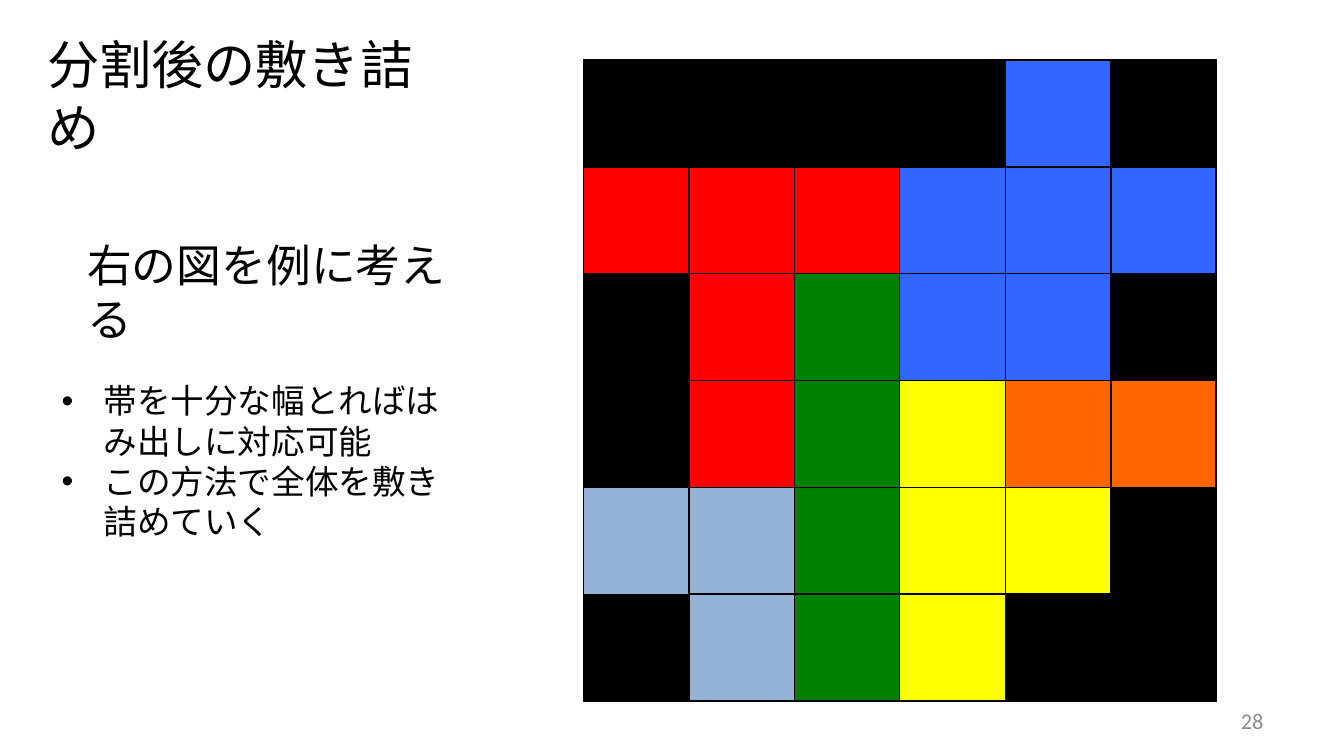
"""Build the slide on tiling after the split, with its coloured grid."""
from dataclasses import dataclass

import lxml.etree
import pptx
import pptx.dml.color
import pptx.enum.text
import pptx.oxml.ns
import pptx.util

Pt = pptx.util.Pt
qn = pptx.oxml.ns.qn
ALIGN = pptx.enum.text.PP_ALIGN
ANCHOR = pptx.enum.text.MSO_ANCHOR

BLACK = "000000"
COLORS = {"K": BLACK, "B": "3366FF", "R": "FF0000", "G": "008000",
          "Y": "FFFF00", "O": "FF6600", "L": "95B3D7"}
TILES = ["KKKKBK", "RRRBBB", "KRGBBK", "KRGYOO", "LLGYYK", "KLGYKK"]
N = len(TILES)


@dataclass
class Label:
    text: str
    left: float
    top: float
    width: float
    height: float
    size: float
    color: str = BLACK
    align: ALIGN = ALIGN.LEFT
    anchor: ANCHOR = ANCHOR.TOP
    bullets: bool = False


TITLE = Label("分割後の敷き詰め", 18, 13.7, 235.4, 41, 28)
LABELS = [
    Label("右の図を例に考える", 39.6, 123.8, 221.8, 36, 24),
    Label("帯を十分な幅とればはみ出しに対応可能\nこの方法で全体を敷き詰めていく",
          25.9, 200.2, 228.2, 94.3, 18, bullets=True),
    Label("28", 516.2, 375.1, 167.8, 21.6, 12, "8C8C8C", ALIGN.RIGHT, ANCHOR.MIDDLE),
]


def rgb(color: str) -> pptx.dml.color.RGBColor:
    """Turn a hex string into a colour."""
    return pptx.dml.color.RGBColor.from_string(color)


def add_bullet(p) -> None:
    """Give a paragraph a hanging bullet."""
    pPr = p._p.get_or_add_pPr()
    pPr.set("marL", str(Pt(22.5)))
    pPr.set("indent", str(-Pt(22.5)))
    lxml.etree.SubElement(pPr, qn("a:buFont"), typeface="Arial")
    lxml.etree.SubElement(pPr, qn("a:buChar"), char="•")


def fill_label(sp, label: Label) -> None:
    """Place a text shape and write its formatted text."""
    sp.left, sp.top = Pt(label.left), Pt(label.top)
    sp.width, sp.height = Pt(label.width), Pt(label.height)
    tf = sp.text_frame
    tf.text = label.text
    tf.word_wrap = True
    tf.auto_size = pptx.enum.text.MSO_AUTO_SIZE.NONE
    tf.vertical_anchor = label.anchor
    for p in tf.paragraphs:
        p.alignment = label.align
        if label.bullets:
            add_bullet(p)
        for r in p.runs:
            r.font.name = "Calibri"
            r.font.size = Pt(label.size)
            r.font.color.rgb = rgb(label.color)


def edge_weight(line: int, across: int) -> float:
    """Return the width of a grid line, heavier on the outer and inner frames."""
    inner = line in (1, N - 1) and 0 < across < N - 1
    return 1 if line in (0, N) or inner else 0.5


def add_border(cell, tag: str, weight: float) -> None:
    """Draw one black side of a table cell."""
    tcPr = cell._tc.get_or_add_tcPr()
    ln = lxml.etree.SubElement(tcPr, qn(tag), w=str(Pt(weight)))
    solid = lxml.etree.SubElement(ln, qn("a:solidFill"))
    lxml.etree.SubElement(solid, qn("a:srgbClr"), val=BLACK)


def add_grid(s, left: float, top: float, col_width: float, row_height: float) -> None:
    """Add the table of coloured tiles."""
    table = s.shapes.add_table(N, N, Pt(left), Pt(top),
                               Pt(col_width * N), Pt(row_height * N)).table
    table.first_row = table.horz_banding = False
    for i, codes in enumerate(TILES):
        table.columns[i].width = Pt(col_width)
        table.rows[i].height = Pt(row_height)
        for j, code in enumerate(codes):
            cell = table.cell(i, j)
            add_border(cell, "a:lnL", edge_weight(j, i))
            add_border(cell, "a:lnR", edge_weight(j + 1, i))
            add_border(cell, "a:lnT", edge_weight(i, j))
            add_border(cell, "a:lnB", edge_weight(i + 1, j))
            cell.fill.solid()
            cell.fill.fore_color.rgb = rgb(COLORS[code])


def main() -> None:
    """Build and save the presentation."""
    prs = pptx.Presentation()
    prs.slide_width, prs.slide_height = Pt(720), Pt(405)
    s = prs.slides.add_slide(prs.slide_layouts[5])
    fill_label(s.shapes.title, TITLE)
    for label in LABELS:
        sp = s.shapes.add_textbox(0, 0, 0, 0)
        fill_label(sp, label)
    add_grid(s, 312.6, 32.2, 56.5, 57.25)
    prs.save("out.pptx")


if __name__ == "__main__":
    main()
